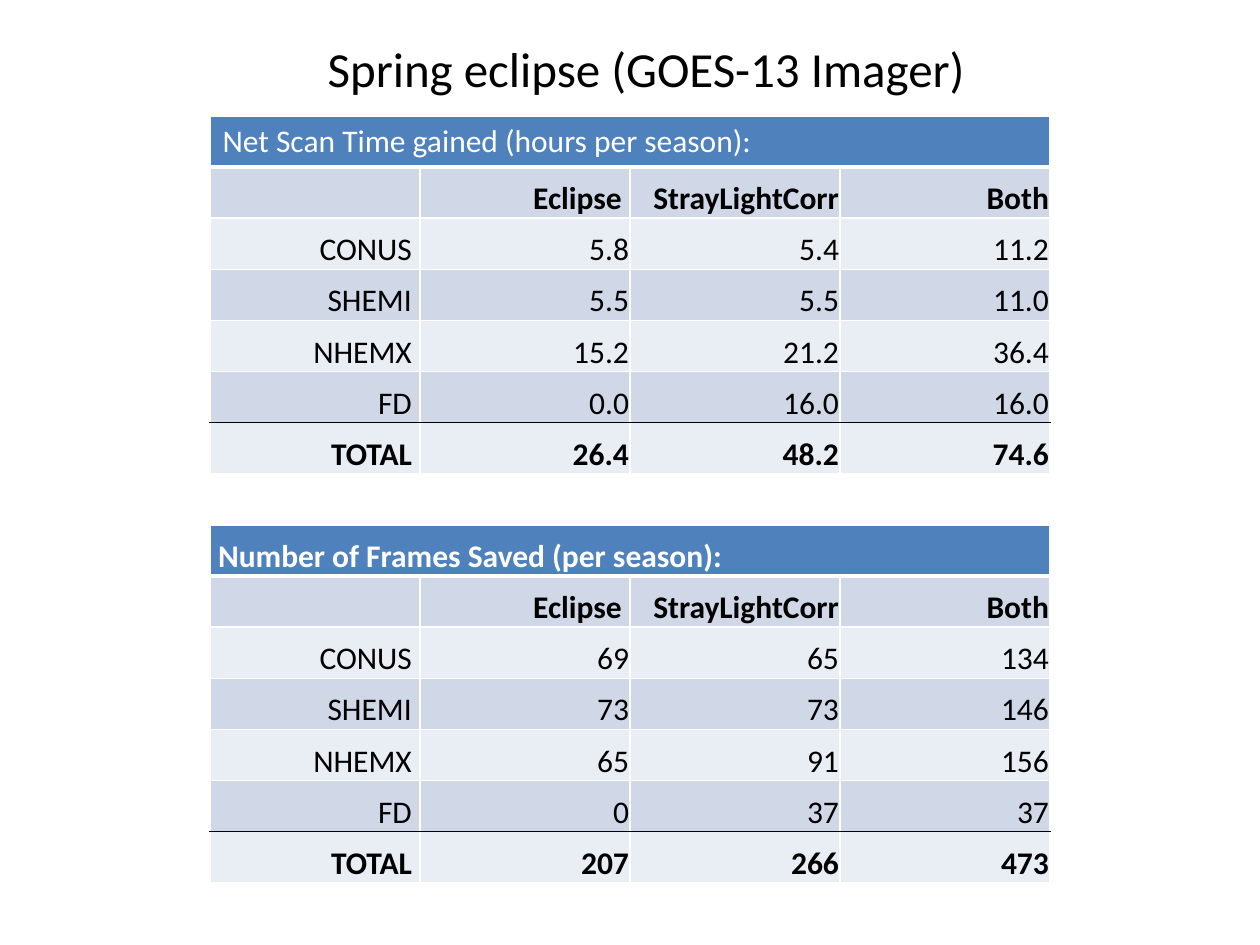
import pptx
import pptx.util
import pptx.dml.color
import pptx.enum.text
import pptx.oxml.ns
import lxml.etree

FONT = "Calibri"
WHITE, BLACK, BLUE = "FFFFFF", "000000", "4F81BD"
BANDS = ["E9EDF4", "D0D8E8"]
ANCHOR = pptx.enum.text.MSO_ANCHOR
ALIGN = pptx.enum.text.PP_ALIGN


def px(n):
    return pptx.util.Emu(round(n * 914400 / 126))


def rgb(value):
    return pptx.dml.color.RGBColor.from_string(value)


prs = pptx.Presentation()
prs.slide_width, prs.slide_height = px(1260), px(945)
s = prs.slides.add_slide(prs.slide_layouts[5])

# Title
title = s.shapes.title
title.left, title.top, title.width, title.height = px(315), px(32), px(669), px(72)
tf = title.text_frame
tf.word_wrap = False
tf.auto_size = pptx.enum.text.MSO_AUTO_SIZE.NONE
tf.vertical_anchor = ANCHOR.TOP
p = tf.paragraphs[0]
p.alignment = ALIGN.LEFT
r = p.add_run()
r.text = "Spring eclipse (GOES-13 Imager)"
r.font.name, r.font.size = FONT, pptx.util.Pt(28)
r.font.color.rgb = rgb(BLACK)

# Table contents: top, heading, heading is bold, data rows
columns = ["", "Eclipse ", "StrayLightCorr", "Both"]
tables = [
    (116, "Net Scan Time gained (hours per season):", False, [
        ["CONUS ", "5.8", "5.4", "11.2"],
        ["SHEMI ", "5.5", "5.5", "11.0"],
        ["NHEMX ", "15.2", "21.2", "36.4"],
        ["FD ", "0.0", "16.0", "16.0"],
        ["TOTAL ", "26.4", "48.2", "74.6"]]),
    (525, " Number of Frames Saved (per season):", True, [
        ["CONUS ", "69", "65", "134"],
        ["SHEMI ", "73", "73", "146"],
        ["NHEMX ", "65", "91", "156"],
        ["FD ", "0", "37", "37"],
        ["TOTAL ", "207", "266", "473"]]),
]

for top, heading, heading_bold, data in tables:
    rows = [[heading, "", "", ""], columns] + data
    last = len(rows) - 1
    frame = s.shapes.add_table(len(rows), 4, px(210), px(top), px(840), px(358))
    table = frame.table
    for col in table.columns:
        col.width = px(210)
    for row in table.rows:
        row.height = px(358 / len(rows))
    table.cell(0, 0).merge(table.cell(0, 3))

    for i, values in enumerate(rows):
        for j, text in enumerate(values):
            cell = table.cell(i, j)

            # Borders: black rule above the total, white elsewhere
            tc_pr = cell._tc.get_or_add_tcPr()
            edges = {"lnL": (WHITE, 1), "lnR": (WHITE, 1),
                     "lnT": (BLACK if i == last else WHITE, 1),
                     "lnB": (BLACK if i == last - 1 else WHITE, 3 if i == 0 else 1)}
            for tag, (color, width) in edges.items():
                ln = lxml.etree.SubElement(tc_pr, pptx.oxml.ns.qn("a:" + tag),
                                           w=str(pptx.util.Pt(width)))
                fill = lxml.etree.SubElement(ln, pptx.oxml.ns.qn("a:solidFill"))
                lxml.etree.SubElement(fill, pptx.oxml.ns.qn("a:srgbClr"), val=color)

            cell.fill.solid()
            cell.fill.fore_color.rgb = rgb(BLUE if i == 0 else BANDS[i % 2])
            if not text:
                continue

            # Text
            if i > 0 or heading_bold:
                cell.vertical_anchor = ANCHOR.BOTTOM
                cell.margin_left = cell.margin_right = cell.margin_top = px(1)
                cell.margin_bottom = 0
            p = cell.text_frame.paragraphs[0]
            p.alignment = ALIGN.RIGHT if i > 0 else ALIGN.LEFT
            r = p.add_run()
            r.text = text
            r.font.name, r.font.size = FONT, pptx.util.Pt(18)
            r.font.bold = heading_bold if i == 0 else i in (1, last)
            r.font.color.rgb = rgb(WHITE if i == 0 else BLACK)

prs.save("out.pptx")
